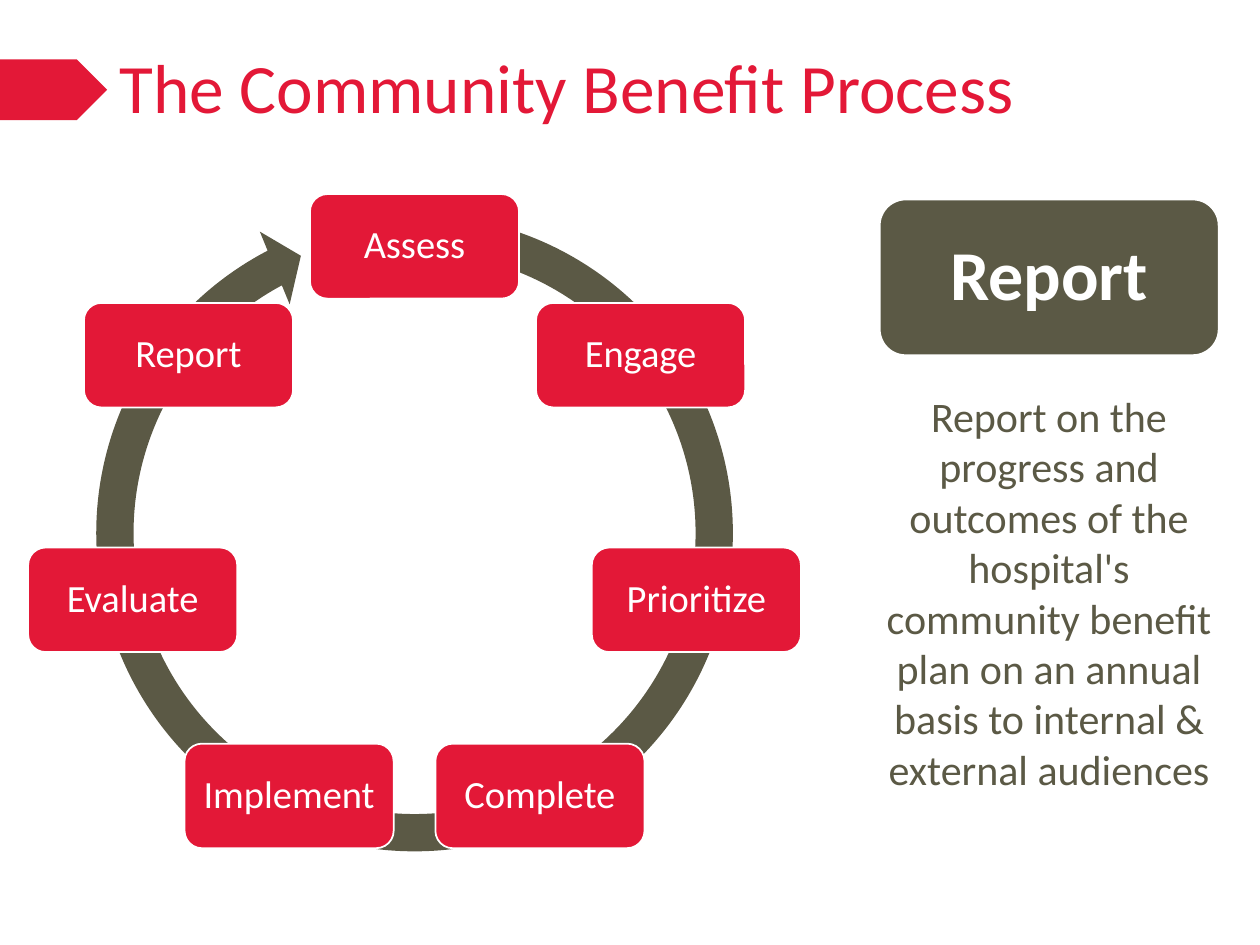
import math

from pptx import Presentation
from pptx.dml.color import RGBColor
from pptx.enum import shapes, text
from pptx.util import Pt

RED, OLIVE, WHITE = "E31837", "5B5945", "FFFFFF"
FONT = "Calibri"

TITLE = "The Community Benefit Process"
STEPS = ["Assess", "Engage", "Prioritize", "Complete",
         "Implement", "Evaluate", "Report"]
CURRENT_STEP = "Report"
DESCRIPTION = ("Report on the progress and outcomes of the hospital's "
               "community benefit plan on an annual basis to internal & "
               "external audiences")

CENTER_X, CENTER_Y, RADIUS = 236.9, 306, 165.2
STEP_WIDTH, STEP_HEIGHT = 119.5, 59.75
RING_SIZE = 387.4
# thickness, head angle, end angle, start angle, head width
RING_ADJUSTMENTS = [0.055, 3.307, 145.312, 169.414, 0.058]


def color(value):
    return RGBColor.from_string(value)


def write(shape, content, size, hex_color, align=text.PP_ALIGN.CENTER,
          bold=False, spacing=None, anchor=text.MSO_ANCHOR.MIDDLE):
    frame = shape.text_frame
    frame.word_wrap = True
    frame.vertical_anchor = anchor
    paragraph = frame.paragraphs[0]
    paragraph.alignment = align
    paragraph.line_spacing = spacing
    run = paragraph.add_run()
    run.text = content
    run.font.name = FONT
    run.font.size = Pt(size)
    run.font.bold = bold
    run.font.color.rgb = color(hex_color)


def add_shape(slide, kind, box, fill, line=None):
    shape = slide.shapes.add_shape(kind, *map(Pt, box))
    shape.shadow.inherit = False
    shape.fill.solid()
    shape.fill.fore_color.rgb = color(fill)
    if line:
        shape.line.color.rgb = color(line)
        shape.line.width = Pt(1)
    else:
        shape.line.fill.background()
    return shape


def add_card(slide, box, fill, label, size, bold=False):
    """Rounded box with a white outline and a centred label."""
    card = add_shape(slide, shapes.MSO_SHAPE.ROUNDED_RECTANGLE, box, fill, WHITE)
    frame = card.text_frame
    frame.margin_left = frame.margin_right = Pt(6)
    frame.margin_top = frame.margin_bottom = Pt(6)
    write(card, label, size, WHITE, bold=bold, spacing=0.9)


def add_cycle(slide):
    ring_box = (CENTER_X - RING_SIZE / 2, CENTER_Y - RING_SIZE / 2 - 1.4,
                RING_SIZE, RING_SIZE)
    ring = add_shape(slide, shapes.MSO_SHAPE.CIRCULAR_ARROW, ring_box, OLIVE)
    for index, value in enumerate(RING_ADJUSTMENTS):
        ring.adjustments[index] = value
    for index, step in enumerate(STEPS):
        angle = 2 * math.pi * index / len(STEPS)
        left = CENTER_X + RADIUS * math.sin(angle) - STEP_WIDTH / 2
        top = CENTER_Y - RADIUS * math.cos(angle) - STEP_HEIGHT / 2
        add_card(slide, (left, top, STEP_WIDTH, STEP_HEIGHT), RED, step, 22)


def main():
    presentation = Presentation()
    presentation.slide_width, presentation.slide_height = Pt(720), Pt(540)
    slide = presentation.slides.add_slide(presentation.slide_layouts[6])

    add_shape(slide, shapes.MSO_SHAPE.PENTAGON, (0, 34, 61.2, 34.6), RED)
    title = slide.shapes.add_textbox(*map(Pt, (61.2, 28, 582.5, 48.5)))
    write(title, TITLE, 39.6, RED, align=text.PP_ALIGN.LEFT, spacing=0.9)

    add_cycle(slide)

    description = slide.shapes.add_textbox(*map(Pt, (494, 219.6, 211, 239.8)))
    write(description, DESCRIPTION, 24, OLIVE, anchor=text.MSO_ANCHOR.TOP)
    add_card(slide, (502.7, 114, 193.7, 89), OLIVE, CURRENT_STEP, 40, bold=True)

    presentation.save("out.pptx")


if __name__ == "__main__":
    main()
